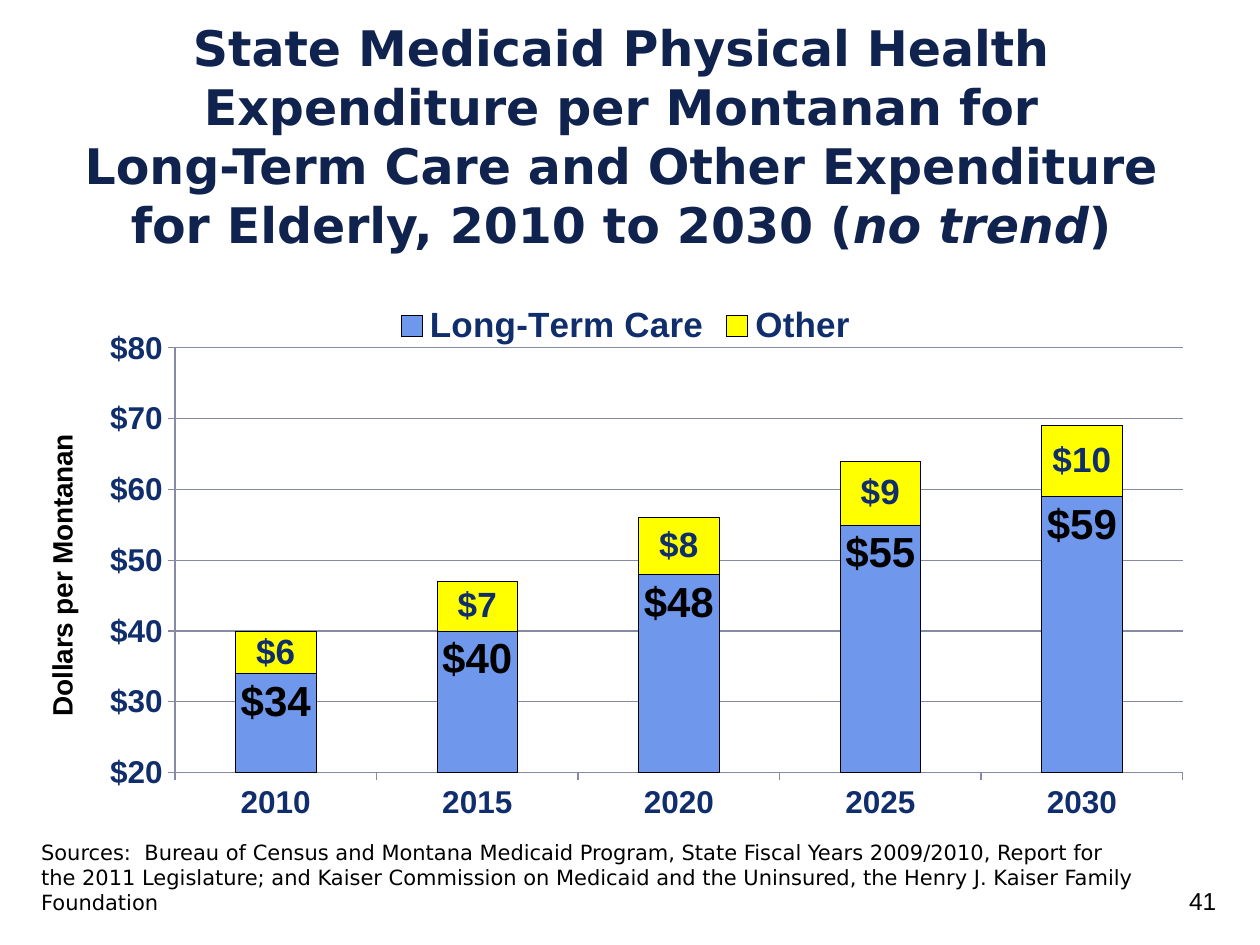
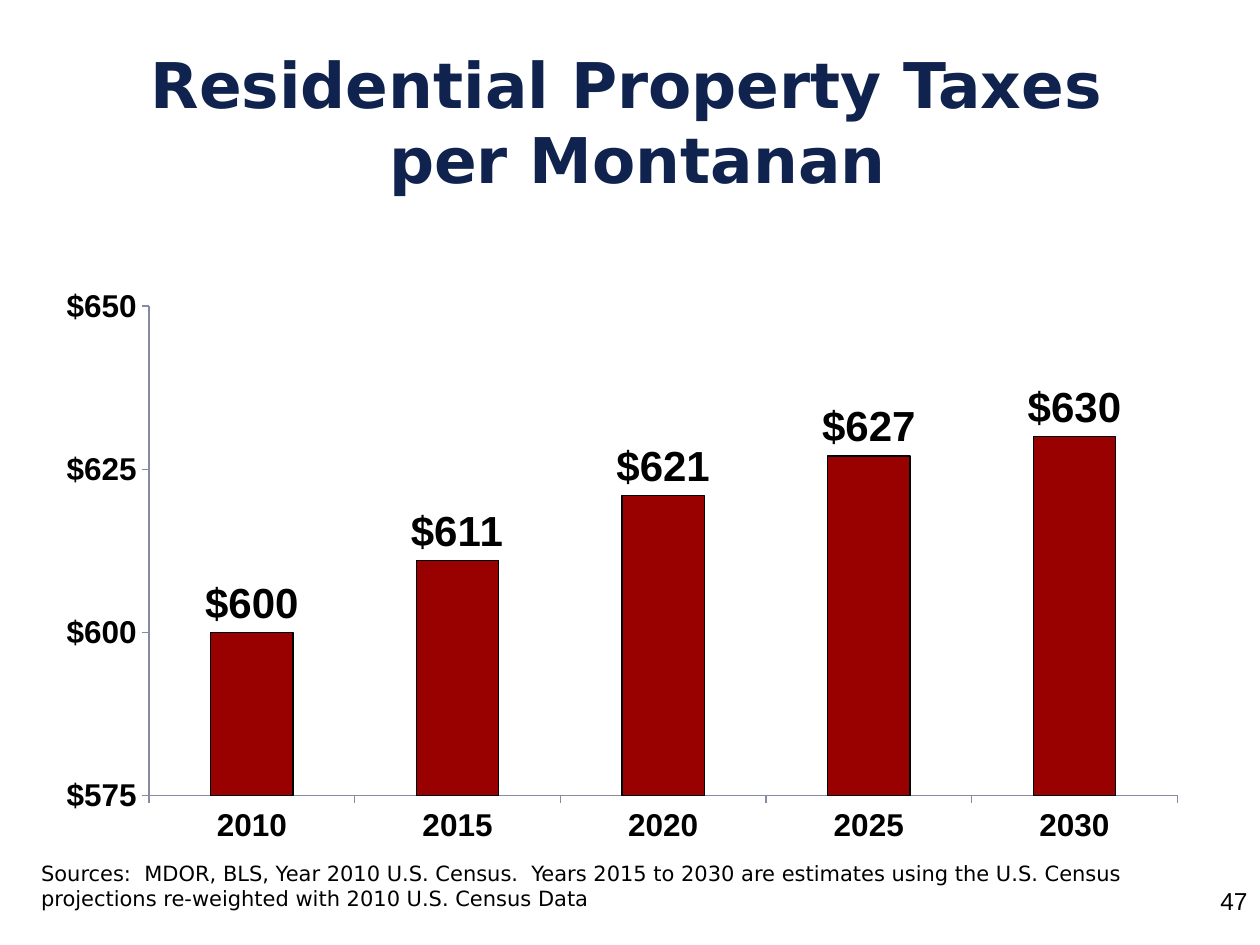
"""Build two slides of column charts on Montana spending and taxes."""
import pptx
import pptx.chart.data
import pptx.dml.color
import pptx.enum.chart
import pptx.enum.text
import pptx.util
from lxml import etree
from pptx.util import Cm

COLORS = {
    "title": "10224E",
    "navy": "102E6C",
    "black": "000000",
    "axis": "878AA5",
    "care": "6F98EC",
    "other": "FFFF00",
    "tax": "990000",
}
TITLE_FONT = "DejaVu Sans"
CHART_FONT = "Arial"
DOLLARS = '"$"#,##0'
YEARS = ["2010", "2015", "2020", "2025", "2030"]
SOURCE_LEFT, SOURCE_WIDTH = 0.58, 22.86
ALIGN = pptx.enum.text.PP_ALIGN
CHART_TYPE = pptx.enum.chart.XL_CHART_TYPE
LABEL_POSITION = pptx.enum.chart.XL_LABEL_POSITION


def rgb(color):
    """Return the named colour as an RGBColor."""
    return pptx.dml.color.RGBColor.from_string(COLORS[color])


def set_font(font, size, color="black", bold=True, name=CHART_FONT, italic=None):
    """Set the look of a font."""
    font.size = pptx.util.Pt(size)
    font.bold = bold
    font.italic = italic
    font.name = name
    font.color.rgb = rgb(color)


def add_text(slide, text, box, align=ALIGN.LEFT, **look):
    """Add a text box; asterisks enclose italics and newlines break lines."""
    frame = slide.shapes.add_textbox(*map(Cm, box)).text_frame
    frame.word_wrap = True
    paragraph = frame.paragraphs[0]
    paragraph.alignment = align
    for part, phrase in enumerate(text.split("*")):
        for row, line in enumerate(phrase.split("\n")):
            if row:
                paragraph.add_line_break()
            run = paragraph.add_run()
            run.text = line
            set_font(run.font, italic=part % 2 == 1, **look)


def add_title(slide, text, box, size):
    """Add the centred slide title."""
    add_text(slide, text, box, ALIGN.CENTER, size=size, color="title", name=TITLE_FONT)


def add_footer(slide, sources, top, height, number, number_left):
    """Add the sources and the slide number."""
    add_text(slide, sources, (SOURCE_LEFT, top, SOURCE_WIDTH, height),
             size=12, bold=False, name=TITLE_FONT)
    add_text(slide, number, (number_left, 17.73, 1.22, 1.32), ALIGN.RIGHT,
             size=14, bold=False)


def style_axis(axis, color):
    """Set the line, ticks and labels of an axis."""
    axis.major_tick_mark = pptx.enum.chart.XL_TICK_MARK.OUTSIDE
    axis.minor_tick_mark = pptx.enum.chart.XL_TICK_MARK.NONE
    axis.format.line.color.rgb = rgb("axis")
    axis.has_major_gridlines = False
    set_font(axis.tick_labels.font, 18, color)


def place_plot(chart, plot_area):
    """Fix the inner plot area by fractions of the chart."""
    area = chart.plots[0]._element.getparent()
    uri = area.nsmap["c"]
    for old in area.findall(f"{{{uri}}}layout"):
        area.remove(old)
    layout = etree.Element(f"{{{uri}}}layout")
    manual = etree.SubElement(layout, f"{{{uri}}}manualLayout")
    settings = [("layoutTarget", "inner"), ("xMode", "edge"), ("yMode", "edge")]
    for tag, value in settings + list(zip("xywh", plot_area)):
        etree.SubElement(manual, f"{{{uri}}}{tag}").set("val", str(value))
    area.insert(0, layout)


def style_series(series, fill, line_width, size, color, position):
    """Colour a series and show its values."""
    series.format.fill.solid()
    series.format.fill.fore_color.rgb = rgb(fill)
    series.format.line.color.rgb = rgb("black")
    series.format.line.width = pptx.util.Pt(line_width)
    labels = series.data_labels
    labels.show_value = True
    labels.number_format = DOLLARS
    labels.number_format_is_linked = False
    labels.position = position
    set_font(labels.font, size, color)


def add_columns(slide, kind, box, values, scale, plot_area, axis_color):
    """Add a column chart of dollars by year and return it."""
    data = pptx.chart.data.CategoryChartData(number_format=DOLLARS)
    data.categories = YEARS
    for name, amounts in values.items():
        data.add_series(name, amounts)
    chart = slide.shapes.add_chart(kind, *map(Cm, box), data).chart
    chart.has_title = False
    chart.has_legend = False
    set_font(chart.font, 18, "navy", bold=False)
    style_axis(chart.category_axis, axis_color)
    dollars = chart.value_axis
    style_axis(dollars, axis_color)
    dollars.minimum_scale, dollars.maximum_scale, dollars.major_unit = scale
    dollars.tick_labels.number_format = DOLLARS
    dollars.tick_labels.number_format_is_linked = False
    chart.plots[0].gap_width = 150
    chart.plots[0].vary_by_categories = False
    place_plot(chart, plot_area)
    return chart


def add_legend(chart):
    """Show the legend above the plot."""
    chart.has_legend = True
    chart.legend.position = pptx.enum.chart.XL_LEGEND_POSITION.TOP
    chart.legend.include_in_layout = False
    set_font(chart.legend.font, 20, "navy")


def add_axis_title(axis, text):
    """Name the value axis."""
    frame = axis.axis_title.text_frame
    frame.text = text
    set_font(frame.paragraphs[0].runs[0].font, 16)


def build_medicaid(slide):
    """Build the slide on Medicaid expenditure."""
    add_title(slide, "State Medicaid Physical Health Expenditure per Montanan for\n"
              "Long-Term Care and Other Expenditure for Elderly, "
              "2010 to 2030 (*no trend*)", (1.09, 0.23, 22.86, 4.98), 28)
    spending = {"Long-Term Care": (34, 40, 48, 55, 59), "Other": (6, 7, 8, 9, 10)}
    chart = add_columns(slide, CHART_TYPE.COLUMN_STACKED, (0.66, 5.84, 23.9, 11.73),
                        spending, (20, 80, 10), (0.12, 0.1, 0.85, 0.73), "navy")
    chart.plots[0].overlap = 100
    chart.value_axis.has_major_gridlines = True
    chart.value_axis.major_gridlines.format.line.color.rgb = rgb("axis")
    add_axis_title(chart.value_axis, "Dollars per Montanan")
    add_legend(chart)
    care, other = chart.series
    style_series(care, "care", 0.25, 24, "black", LABEL_POSITION.INSIDE_END)
    style_series(other, "other", 0.25, 20, "navy", LABEL_POSITION.CENTER)
    add_footer(slide, "Sources:  Bureau of Census and Montana Medicaid Program, "
               "State Fiscal Years 2009/2010, Report for \nthe 2011 Legislature; and "
               "Kaiser Commission on Medicaid and the Uninsured, the Henry J. Kaiser "
               "Family Foundation", 16.79, 1.8, "41", 23.55)


def build_taxes(slide):
    """Build the slide on residential property taxes."""
    add_title(slide, "Residential Property Taxes \nper Montanan",
              (0.3, 0.79, 25.1, 3.81), 36)
    taxes = {"Series 1": (600, 611, 621, 627, 630)}
    chart = add_columns(slide, CHART_TYPE.COLUMN_CLUSTERED, (0.91, 5.59, 23.29, 11.61),
                        taxes, (575, 650, 25), (0.09, 0.05, 0.89, 0.85), "black")
    style_series(chart.series[0], "tax", 0.75, 24, "black", LABEL_POSITION.OUTSIDE_END)
    add_footer(slide, "Sources:  MDOR, BLS, Year 2010 U.S. Census.  Years 2015 to 2030 "
               "are estimates using the U.S. Census projections re-weighted with "
               "2010 U.S. Census Data", 17.22, 1.27, "47", 24.18)


def main():
    """Build and save the presentation."""
    deck = pptx.Presentation()
    deck.slide_width, deck.slide_height = Cm(25.4), Cm(19.05)
    for build in (build_medicaid, build_taxes):
        build(deck.slides.add_slide(deck.slide_layouts[6]))
    deck.save("out.pptx")


if __name__ == "__main__":
    main()
